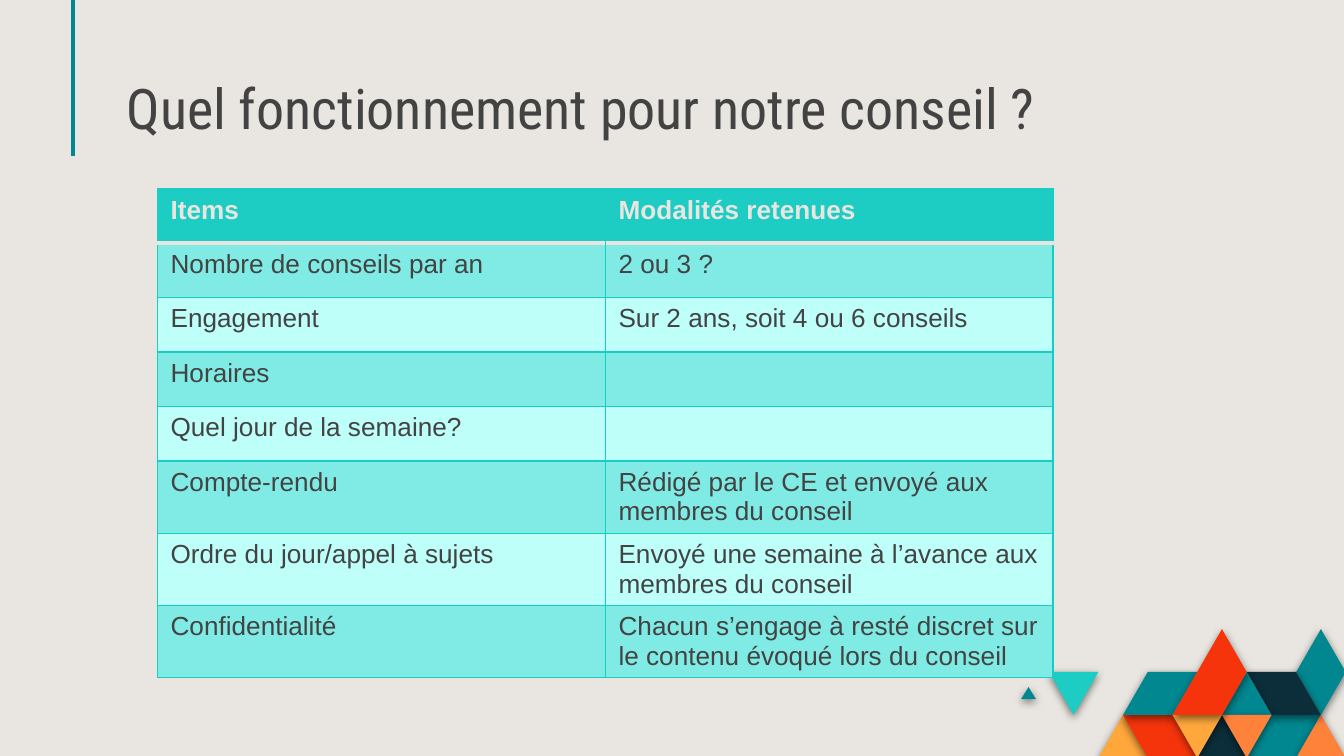
from lxml import etree
from pptx import Presentation
from pptx.dml.color import RGBColor
from pptx.enum.shapes import MSO_CONNECTOR
from pptx.enum.text import MSO_ANCHOR, MSO_AUTO_SIZE, PP_ALIGN
from pptx.oxml.ns import qn
from pptx.util import Pt

STRAIGHT = MSO_CONNECTOR.STRAIGHT
BOTTOM = MSO_ANCHOR.BOTTOM
LEFT = PP_ALIGN.LEFT
NO_AUTOFIT = MSO_AUTO_SIZE.NONE

BACKGROUND, TEXT = "E9E6E1", "434343"
TEAL, TURQUOISE, BORDER = "018790", "1DCDC3", "18CDC3"
DARK_BAND, LIGHT_BAND = "7FEBE4", "BFFFFA"
RED, ORANGE, AMBER, NAVY = "F5340B", "FF823B", "FFA73B", "0C2E3A"

GRID_X, GRID_Y, STEP_X, STEP_Y = 588.4, 337, 13.25, 23
TILES = [
    (AMBER, [(0, 3), (1, 2), (2, 3)]),
    (RED, [(1, 2), (3, 2), (4, 3), (2, 3)]),
    (TEAL, [(6, 3), (7, 2), (9, 2), (8, 3)]),
    (ORANGE, [(8, 3), (9, 2), (10, 3)]),
    (NAVY, [(4, 3), (5, 2), (6, 3)]),
    (TEAL, [(1, 2), (2, 1), (4, 1), (3, 2)]),
    (TEAL, [(-3.12, 1.63), (-2.82, 1.35), (-2.52, 1.63)]),
    (TURQUOISE, [(-2, 1), (0, 1), (-1, 2)]),
    (TEAL, [(8, 1), (9, 0), (10, 1), (9, 2)]),
    (NAVY, [(6, 1), (8, 1), (9, 2), (7, 2)]),
    (TEAL, [(5, 2), (6, 1), (7, 2)]),
    (ORANGE, [(5, 2), (7, 2), (6, 3)]),
    (AMBER, [(3, 2), (5, 2), (4, 3)]),
    (RED, [(3, 2), (5, 0), (6, 1), (5, 2)]),
]

ROWS = [
    ("Items", "Modalités retenues"),
    ("Nombre de conseils par an", "2 ou 3 ?"),
    ("Engagement", "Sur 2 ans, soit 4 ou 6 conseils"),
    ("Horaires", ""),
    ("Quel jour de la semaine?", ""),
    ("Compte-rendu", "Rédigé par le CE et envoyé aux membres du conseil"),
    ("Ordre du jour/appel à sujets",
     "Envoyé une semaine à l’avance aux membres du conseil"),
    ("Confidentialité",
     "Chacun s’engage à resté discret sur le contenu évoqué lors du conseil"),
]
ROW_HEIGHTS = [29.2] * 5 + [38.7] * 3
COLUMN_WIDTH = 240


def rgb(color):
    return RGBColor.from_string(color)


def format_runs(p, font, size, color, bold=False):
    for r in p.runs:
        r.font.name = font
        r.font.size = Pt(size)
        r.font.bold = bold
        r.font.color.rgb = rgb(color)


def add_color(parent, color):
    fill = etree.SubElement(parent, qn("a:solidFill"))
    return etree.SubElement(fill, qn("a:srgbClr"), val=color)


def add_accent_line(slide):
    line = slide.shapes.add_connector(STRAIGHT, Pt(39.1), Pt(0), Pt(39.1), Pt(83.5))
    line.line.color.rgb = rgb(TEAL)
    line.line.width = Pt(2.25)
    etree.SubElement(line._element.spPr, qn("a:effectLst"))


def add_shadow(sp):
    sp.shadow.inherit = False
    effects = sp._element.spPr.find(qn("a:effectLst"))
    shadow = etree.SubElement(
        effects, qn("a:outerShdw"), blurRad=str(Pt(4.5)), dist=str(Pt(1.5)),
        dir="5400000", algn="bl", rotWithShape="0")
    color = etree.SubElement(shadow, qn("a:srgbClr"), val="000000")
    etree.SubElement(color, qn("a:alpha"), val="50000")


def add_tile(slide, color, corners):
    points = [(Pt(GRID_X + x * STEP_X), Pt(GRID_Y + y * STEP_Y)) for x, y in corners]
    builder = slide.shapes.build_freeform(*points[0])
    builder.add_line_segments(points[1:], close=True)
    sp = builder.convert_to_shape()
    sp.fill.solid()
    sp.fill.fore_color.rgb = rgb(color)
    sp.line.fill.background()
    add_shadow(sp)


def set_title(slide, text):
    title = slide.shapes.title
    title.left, title.top, title.width, title.height = Pt(60.5), Pt(36.7), Pt(575), Pt(45.4)
    tf = title.text_frame
    tf.text = text
    tf.word_wrap = True
    tf.auto_size = NO_AUTOFIT
    tf.vertical_anchor = BOTTOM
    tf.margin_left = tf.margin_right = tf.margin_top = tf.margin_bottom = Pt(7.2)
    p = tf.paragraphs[0]
    p.alignment = LEFT
    p.line_spacing = 0.8
    format_runs(p, "Roboto Condensed", 30, TEXT)


def set_border(cell, side, color, width):
    line = etree.SubElement(cell._tc.get_or_add_tcPr(), qn("a:ln" + side), w=str(Pt(width)))
    add_color(line, color)


def format_cell(cell, row, column):
    header = row == 0
    inner = TURQUOISE if header else BORDER
    rule = (BACKGROUND, 2)
    thin = (BORDER, 0.75)
    set_border(cell, "L", inner if column else BORDER, 0.75)
    set_border(cell, "R", BORDER if column else inner, 0.75)
    set_border(cell, "T", *(rule if row == 1 else thin))
    set_border(cell, "B", *(rule if header else thin))
    cell.fill.solid()
    band = DARK_BAND if row % 2 else LIGHT_BAND
    cell.fill.fore_color.rgb = rgb(TURQUOISE if header else band)
    format_runs(cell.text_frame.paragraphs[0], "Arial", 14,
                BACKGROUND if header else TEXT, header)


def add_council_table(slide):
    frame = slide.shapes.add_table(
        len(ROWS), 2, Pt(84.2), Pt(101), Pt(2 * COLUMN_WIDTH), Pt(sum(ROW_HEIGHTS)))
    table = frame.table
    table.horz_banding = False
    table.first_row = False
    for column in table.columns:
        column.width = Pt(COLUMN_WIDTH)
    for i, (texts, height) in enumerate(zip(ROWS, ROW_HEIGHTS)):
        table.rows[i].height = Pt(height)
        for j, text in enumerate(texts):
            cell = table.cell(i, j)
            cell.text = text
            format_cell(cell, i, j)


def main():
    prs = Presentation()
    prs.slide_width, prs.slide_height = Pt(720), Pt(405)
    slide = prs.slides.add_slide(prs.slide_layouts[5])
    slide.background.fill.solid()
    slide.background.fill.fore_color.rgb = rgb(BACKGROUND)
    add_accent_line(slide)
    for color, corners in TILES:
        add_tile(slide, color, corners)
    set_title(slide, "Quel fonctionnement pour notre conseil ?")
    add_council_table(slide)
    prs.save("out.pptx")


if __name__ == "__main__":
    main()
